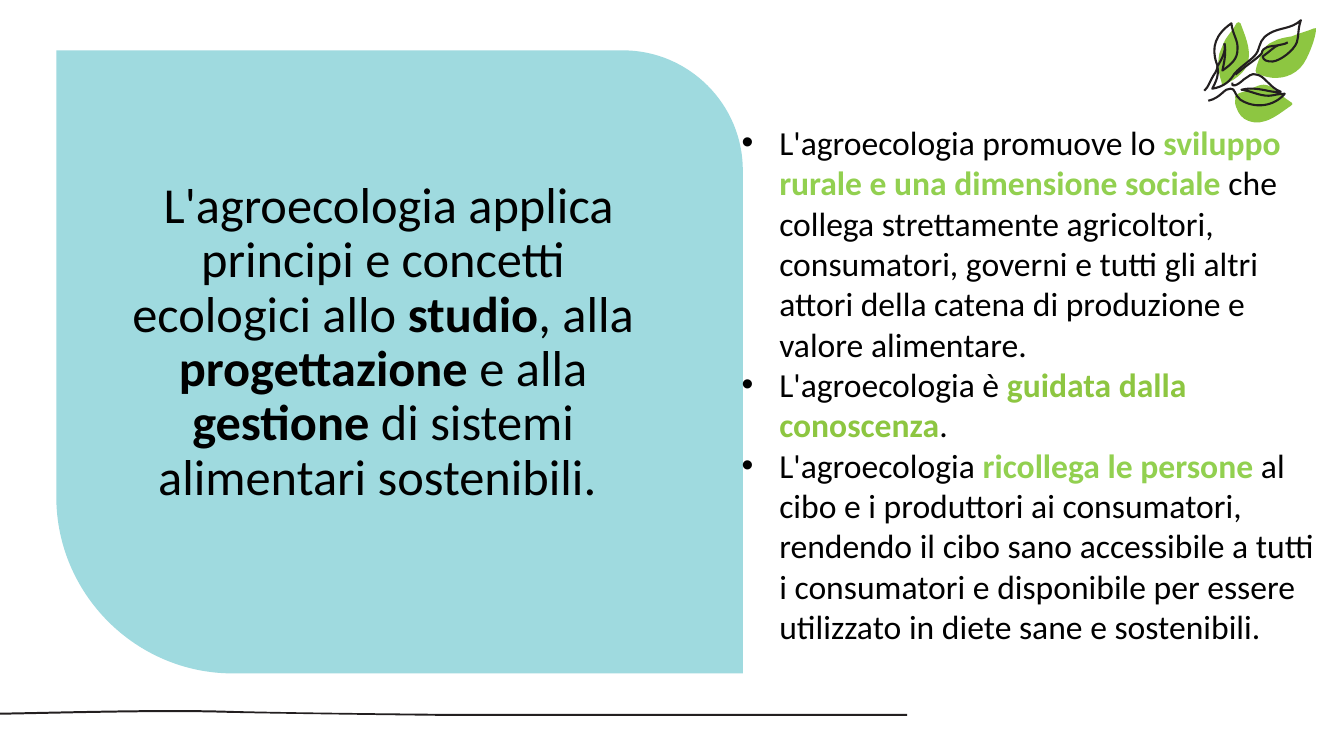
from dataclasses import dataclass

from lxml.etree import SubElement
from pptx import Presentation
from pptx.dml.color import RGBColor
from pptx.enum.text import MSO_ANCHOR as Anchor, PP_ALIGN as Align
from pptx.oxml.ns import qn
from pptx.util import Cm, Pt


@dataclass(frozen=True)
class Theme:
    panel: str = "9FDADF"
    leaf: str = "8DC641"
    accent: str = "92D050"
    ink: str = "231F20"
    text: str = "000000"
    font: str = "Calibri"
    statement_size: int = 36
    bullet_size: int = 24
    stroke: float = 1.5


THEME = Theme()

STATEMENT = [
    (" L'agroecologia applica principi e concetti ecologici allo ", False),
    ("studio", True), (", alla ", False), ("progettazione ", True),
    ("e alla ", False), ("gestione ", True),
    ("di sistemi alimentari sostenibili. ", False),
]

# Each point: opening words, highlighted words, highlight colour, closing words
POINTS = [
    ("L'agroecologia promuove lo ", "sviluppo rurale e una dimensione sociale ",
     THEME.accent,
     "che collega strettamente agricoltori, consumatori, governi e tutti gli "
     "altri attori della catena di produzione e valore alimentare."),
    ("L'agroecologia è ", "guidata dalla conoscenza", THEME.leaf, "."),
    ("L'agroecologia ", "ricollega le persone ", THEME.accent,
     "al cibo e i produttori ai consumatori, rendendo il cibo sano accessibile "
     "a tutti i consumatori e disponibile per essere utilizzato in diete sane "
     "e sostenibili."),
]

# Sprig outlines on a grid 112 units wide: a start point, then cubic curves
SPRIG_WIDTH = 112
LEAVES = [
    [(22, 65), (32, 60, 43, 52, 44, 41), (46, 29, 40, 16, 36, 5),
     (35, 3, 33, 4, 32, 5), (29, 11, 25, 15, 21, 21), (19, 25, 17, 30, 15, 35),
     (13, 44, 14, 54, 17, 63), (16, 65, 18, 68, 22, 65)],
    [(91, 53), (97, 49, 101, 42, 104, 35), (107, 28, 110, 20, 111, 12),
     (112, 10, 110, 9, 109, 10), (102, 13, 94, 15, 87, 18),
     (81, 19, 74, 20, 69, 23), (63, 25, 60, 29, 57, 34),
     (55, 40, 52, 46, 51, 52), (51, 54, 52, 55, 53, 55),
     (65, 61, 80, 61, 91, 53)],
    [(86, 87), (88, 86, 88, 85, 87, 84), (81, 80, 76, 76, 71, 72),
     (68, 69, 64, 66, 59, 66), (55, 66, 51, 68, 47, 70),
     (44, 71, 40, 73, 36, 74), (33, 75, 29, 77, 31, 80),
     (30, 83, 31, 87, 32, 89), (34, 95, 38, 100, 44, 102),
     (60, 108, 74, 95, 86, 87)],
]
VEINS = [
    [(0, 72), (4, 69, 6, 61, 11, 54), (13, 50, 14, 48, 12, 44),
     (7, 29, 11, 16, 27, 5), (28, 16, 34, 22, 33, 31),
     (33, 40, 28, 45, 18, 52), (20, 43, 22, 33, 20, 25)],
    [(20, 25), (22, 33, 17, 41, 13, 48), (15, 56, 12, 62, 8, 70),
     (20, 68, 26, 62, 30, 55), (38, 46, 50, 40, 53, 33),
     (56, 25, 56, 20, 65, 15), (75, 9, 86, 11, 96, 2),
     (93, 10, 94, 18, 92, 24), (89, 32, 76, 42, 68, 43),
     (62, 43, 59, 42, 58, 38), (65, 33, 70, 28, 73, 27),
     (76, 26, 80, 26, 83, 24)],
    [(73, 27), (65, 28, 58, 28, 57, 35), (53, 40, 40, 48, 31, 56)],
    [(28, 64), (26, 69, 33, 67, 39, 61), (44, 58, 47, 54, 52, 56),
     (60, 57, 65, 69, 76, 73), (66, 75, 54, 67, 37, 71),
     (46, 72, 54, 77, 64, 77), (68, 77, 73, 75, 80, 75),
     (69, 88, 50, 90, 36, 81), (30, 77, 31, 69, 26, 70),
     (20, 69, 17, 79, 4, 82)],
]


def rgb(code):
    return RGBColor.from_string(code)


def draw_outlines(shapes, outlines, box, unit, color, filled=True):
    """Draw one freeform of lines (2 numbers) and cubic curves (6 numbers)."""
    def scaled(x, y):
        return round(box[0] + x * unit), round(box[1] + y * unit)

    builder = shapes.build_freeform(*scaled(*outlines[0][0]))
    for index, (start, *pieces) in enumerate(outlines):
        if index:
            builder.move_to(*scaled(*start))
        builder.add_line_segments([scaled(*piece[-2:]) for piece in pieces],
                                  close=filled)
    shape = builder.convert_to_shape()
    segments = list(shape._element.iter(qn("a:lnTo")))
    pieces = [piece for outline in outlines for piece in outline[1:]]
    for segment, piece in zip(segments, pieces):
        if len(piece) == 2:
            continue
        curve = segment.makeelement(qn("a:cubicBezTo"))
        for x, y in zip(piece[::2], piece[1::2]):
            x, y = scaled(x, y)
            SubElement(curve, qn("a:pt"), x=str(x - shape.left), y=str(y - shape.top))
        segment.getparent().replace(segment, curve)
    shape.shadow.inherit = False
    if filled:
        shape.fill.solid()
        shape.fill.fore_color.rgb = rgb(color)
        shape.line.fill.background()
    else:
        shape.fill.background()
        shape.line.color.rgb = rgb(color)
        shape.line.width = Pt(THEME.stroke)


def add_run(paragraph, text, size, color=THEME.text, bold=False):
    run = paragraph.add_run()
    run.text = text
    for name, value in {"name": THEME.font, "size": Pt(size), "bold": bold}.items():
        setattr(run.font, name, value)
    run.font.color.rgb = rgb(color)


def add_bullet(paragraph):
    properties = paragraph._p.get_or_add_pPr()
    properties.set("marL", str(Cm(0.95)))
    properties.set("indent", str(-Cm(0.95)))
    color = SubElement(properties, qn("a:buClr"))
    SubElement(color, qn("a:srgbClr"), val=THEME.text)
    SubElement(properties, qn("a:buFont"), typeface="Arial")
    SubElement(properties, qn("a:buChar"), char="•")


def draw_ground_line(slide, box):
    width = 22.86
    ground = [(width, 0.13), (11.25, 0.13), (11.2, 0.13, 7.11, 0.08, 5.66, 0.05),
              (3.94, 0, 1.32, 0.08, 0, 0.1), (0, 0.05),
              (1.32, 0.03, 3.94, -0.05, 5.66, 0),
              (7.14, 0.05, 11.2, 0.08, 11.25, 0.08), (width, 0.08)]
    draw_outlines(slide.shapes, [ground], box, box[2] / width, THEME.ink)


def draw_panel(slide, box):
    w, h, big, small = box[2].cm, box[3].cm, 4.45, 3.02
    bend = 0.45  # share of the radius left between a control point and its corner
    panel = [(w, h), (big, h),
             (big * bend, h, 0, h - big * bend, 0, h - big), (0, 0),
             (w - small, 0),
             (w - small * bend, 0, w, small * bend, w, small)]
    draw_outlines(slide.shapes, [panel], box, Cm(1), THEME.panel)


def write_statement(slide, box):
    """Write the main statement and bring it in front of the panel."""
    statement = slide.placeholders[1]
    slide.shapes._spTree.append(statement.element)
    for name, value in zip(("left", "top", "width", "height"), box):
        setattr(statement, name, value)
    frame = statement.text_frame
    frame.word_wrap = True
    frame.vertical_anchor = Anchor.TOP
    paragraph = frame.paragraphs[0]
    layout = {"alignment": Align.CENTER, "line_spacing": 0.9, "space_before": Pt(0)}
    for name, value in layout.items():
        setattr(paragraph, name, value)
    for text, bold in STATEMENT:
        add_run(paragraph, text, THEME.statement_size, bold=bold)


def draw_points(slide, box):
    frame = slide.shapes.add_textbox(*box).text_frame
    frame.word_wrap = True
    for index, (opening, highlight, color, closing) in enumerate(POINTS):
        paragraph = frame.add_paragraph() if index else frame.paragraphs[0]
        add_bullet(paragraph)
        add_run(paragraph, opening, THEME.bullet_size)
        add_run(paragraph, highlight, THEME.bullet_size, color, True)
        add_run(paragraph, closing, THEME.bullet_size)


def draw_sprig(slide, box):
    sprig = slide.shapes.add_group_shape().shapes
    unit = box[2] / SPRIG_WIDTH
    for leaf in LEAVES:
        draw_outlines(sprig, [leaf], box, unit, THEME.leaf)
    draw_outlines(sprig, VEINS, box, unit, THEME.ink, filled=False)


def main():
    deck = Presentation()
    deck.slide_width, deck.slide_height = Cm(33.87), Cm(19.05)
    slide = deck.slides.add_slide(deck.slide_layouts[2])
    heading = slide.shapes.title.element
    heading.getparent().remove(heading)
    draw_ground_line(slide, (Cm(0), Cm(17.91), Cm(22.86), Cm(0.13)))
    draw_panel(slide, (Cm(1.42), Cm(1.27), Cm(17.3), Cm(15.7)))
    write_statement(slide, (Cm(2.44), Cm(4.4), Cm(14.43), Cm(8.41)))
    draw_points(slide, (Cm(18.44), Cm(2.95), Cm(15.09), Cm(13.59)))
    draw_sprig(slide, (Cm(30.35), Cm(0.46), Cm(2.84), Cm(2.67)))
    deck.save("out.pptx")


if __name__ == "__main__":
    main()
